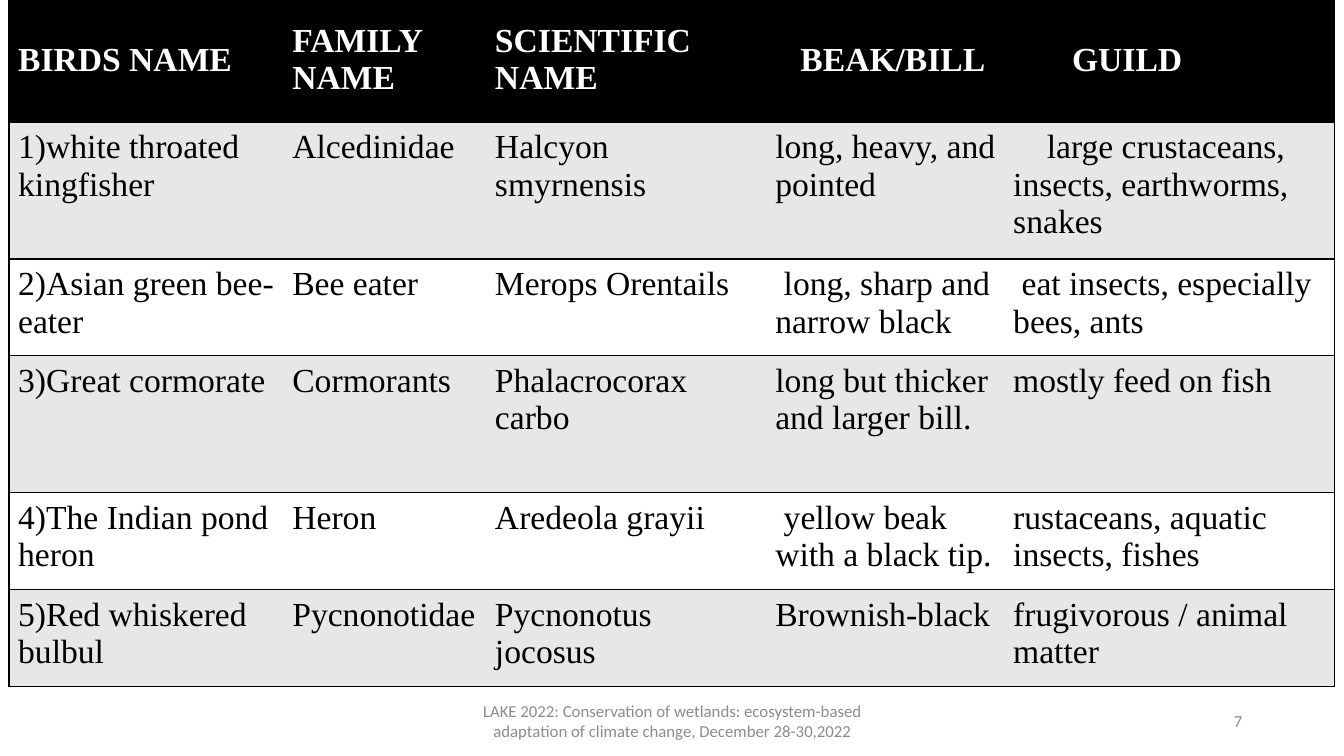
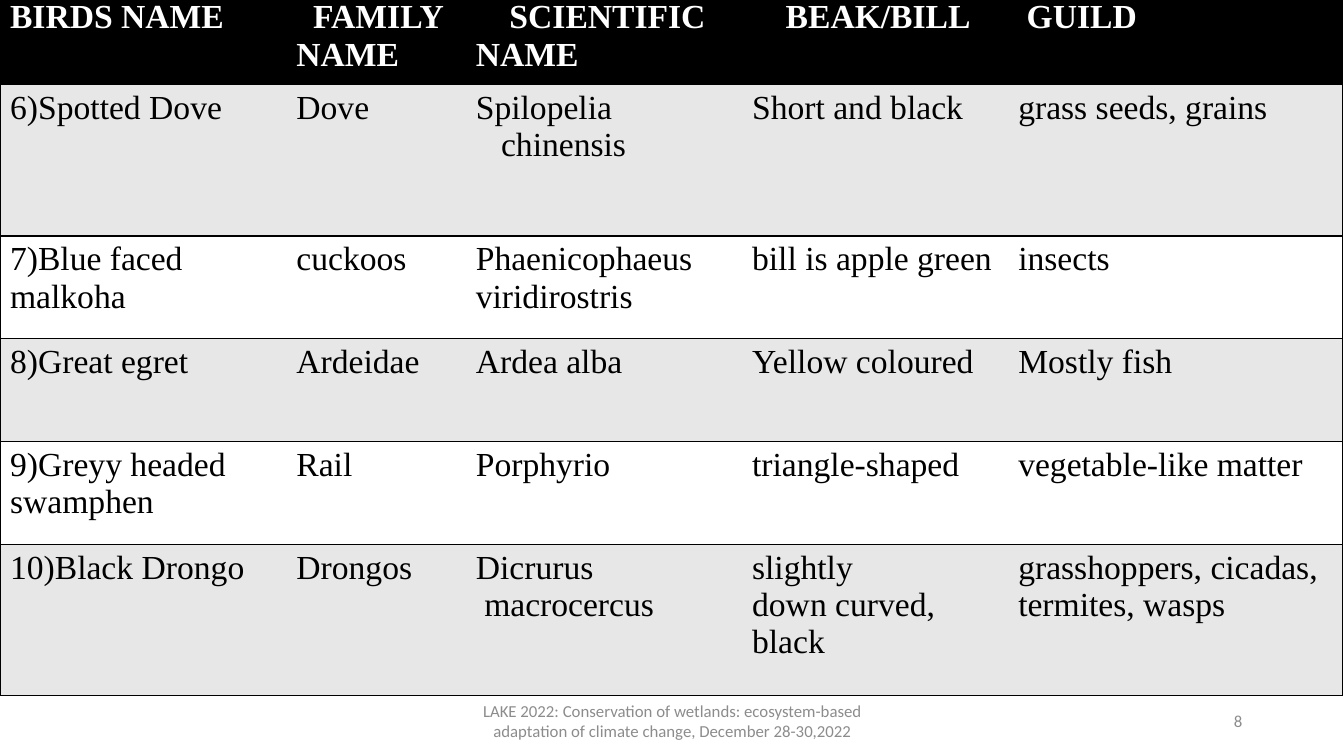
from lxml import etree
from pptx import Presentation
from pptx.dml.color import RGBColor
from pptx.enum.text import MSO_ANCHOR, PP_ALIGN
from pptx.oxml.ns import qn
from pptx.util import Inches, Pt

MIDDLE, TOP = MSO_ANCHOR.MIDDLE, MSO_ANCHOR.TOP
CENTER, RIGHT = PP_ALIGN.CENTER, PP_ALIGN.RIGHT

BLACK, WHITE, BAND, MUTED = "000000", "FFFFFF", "E7E7E7", "8C8C8C"
TABLE_FONT, FOOTER_FONT = "Times New Roman", "Calibri"
GAP_MARK, GAP_WIDTH = ">", Pt(6)
CONFERENCE = (
    "LAKE 2022: Conservation of wetlands: ecosystem-based "
    "adaptation of climate change, December 28-30,2022"
)

BIRD_SLIDES = [
    {
        "page": 7,
        "box": (0.09, -0.02),
        "columns": (2.72, 2.01, 2.78, 2.36, 3.28),
        "heights": (1.23, 1.36, 0.96, 1.36, 0.96, 0.96),
        "insets": (0.09, 0.07, 0.06, 0.07),
        "header_anchor": MIDDLE,
        "rows": [
            ("BIRDS NAME", "FAMILY NAME", "SCIENTIFIC\nNAME",
             ">>>BEAK/BILL", ">>>>>>>GUILD"),
            ("1)white throated kingfisher", "Alcedinidae", "Halcyon smyrnensis",
             "long, heavy, and pointed",
             ">>>>large crustaceans, insects, earthworms, snakes"),
            ("2)Asian green bee-eater", "Bee eater", "Merops Orentails",
             ">long, sharp and narrow black",
             ">eat insects, especially bees, ants"),
            ("3)Great cormorate", "Cormorants", "Phalacrocorax\ncarbo",
             "long but thicker and larger bill.", "mostly feed on fish"),
            ("4)The Indian pond heron", "Heron", "Aredeola grayii",
             ">yellow beak with a black tip.",
             "rustaceans, aquatic insects, fishes"),
            ("5)Red whiskered bulbul", "Pycnonotidae", "Pycnonotus jocosus",
             "Brownish-black", "frugivorous / animal matter"),
        ],
    },
    {
        "page": 8,
        "box": (0, -0.06),
        "columns": (2.84, 1.78, 2.74, 2.64, 3.32),
        "heights": (0.88, 1.5, 1.02, 1.02, 1.02, 1.5),
        "insets": (0.1, 0.05, 0.1, 0.05),
        "header_anchor": TOP,
        "rows": [
            ("BIRDS NAME", ">>FAMILY NAME", ">>>>SCIENTIFIC NAME",
             ">>>>BEAK/BILL", ">GUILD"),
            ("6)Spotted Dove", "Dove", "Spilopelia\n>>>chinensis",
             "Short and black", "grass seeds, grains"),
            ("7)Blue faced malkoha", "cuckoos", "Phaenicophaeus\nviridirostris",
             "bill is apple green", "insects"),
            ("8)Great egret", "Ardeidae", "Ardea alba",
             "Yellow coloured", "Mostly fish"),
            ("9)Greyy headed swamphen", "Rail", "Porphyrio",
             "triangle-shaped", "vegetable-like matter"),
            ("10)Black Drongo", "Drongos", "Dicrurus\n>macrocercus",
             "slightly\vdown curved,\nblack",
             "grasshoppers, cicadas, termites, wasps"),
        ],
    },
]


def color(value):
    return RGBColor.from_string(value)


def style_font(paragraph, name, size, fill, bold=False):
    for run in paragraph.runs:
        run.font.name = name
        run.font.size = Pt(size)
        run.font.bold = bold
        run.font.color.rgb = color(fill)


def set_borders(cell, ruled_sides):
    properties = cell._tc.get_or_add_tcPr()
    for side in "LRTB":
        border = etree.SubElement(properties, qn(f"a:ln{side}"), w=str(Pt(1)))
        if side in ruled_sides:
            ink = etree.SubElement(border, qn("a:solidFill"))
            etree.SubElement(ink, qn("a:srgbClr"), val=BLACK)
        else:
            etree.SubElement(border, qn("a:noFill"))


def fill_cell(cell, text, font_color, bold):
    cell.text_frame.text = text.replace(GAP_MARK, "")
    for paragraph, line in zip(cell.text_frame.paragraphs, text.split("\n")):
        gaps = line.count(GAP_MARK)
        if gaps:
            layout = paragraph._p.get_or_add_pPr()
            layout.set("marL", "0")
            layout.set("indent", str(gaps * GAP_WIDTH))
        style_font(paragraph, TABLE_FONT, 24, font_color, bold)


def add_bird_table(slide, content):
    left, top = content["box"]
    columns, heights, rows = content["columns"], content["heights"], content["rows"]
    birds = slide.shapes.add_table(
        len(rows), len(columns), Inches(left), Inches(top),
        Inches(sum(columns)), Inches(sum(heights))).table
    for column, width in zip(birds.columns, columns):
        column.width = Inches(width)
    for row, height in zip(birds.rows, heights):
        row.height = Inches(height)
    last = len(columns) - 1
    for r, texts in enumerate(rows):
        header = r == 0
        background = BLACK if header else BAND if r % 2 else WHITE
        for c, text in enumerate(texts):
            cell = birds.cell(r, c)
            (cell.margin_left, cell.margin_top, cell.margin_right,
             cell.margin_bottom) = map(Inches, content["insets"])
            cell.vertical_anchor = content["header_anchor"] if header else TOP
            set_borders(cell, "TB" + ("L" if c == 0 else "R" if c == last else ""))
            cell.fill.solid()
            cell.fill.fore_color.rgb = color(background)
            fill_cell(cell, text, WHITE if header else BLACK, header)


def add_footer_text(slide, left, width, text, alignment):
    frame = slide.shapes.add_textbox(
        Inches(left), Inches(6.95), Inches(width), Inches(0.4)).text_frame
    frame.word_wrap = True
    frame.vertical_anchor = MIDDLE
    frame.text = text
    paragraph = frame.paragraphs[0]
    paragraph.alignment = alignment
    style_font(paragraph, FOOTER_FONT, 12, MUTED)


def add_footer(slide, page):
    add_footer_text(slide, 4.42, 4.5, CONFERENCE, CENTER)
    add_footer_text(slide, 9.42, 3, str(page), RIGHT)


def main():
    deck = Presentation()
    deck.slide_width, deck.slide_height = Inches(13.33), Inches(7.5)
    for content in BIRD_SLIDES:
        slide = deck.slides.add_slide(deck.slide_layouts[6])
        add_bird_table(slide, content)
        add_footer(slide, content["page"])
    deck.save("out.pptx")


if __name__ == "__main__":
    main()
